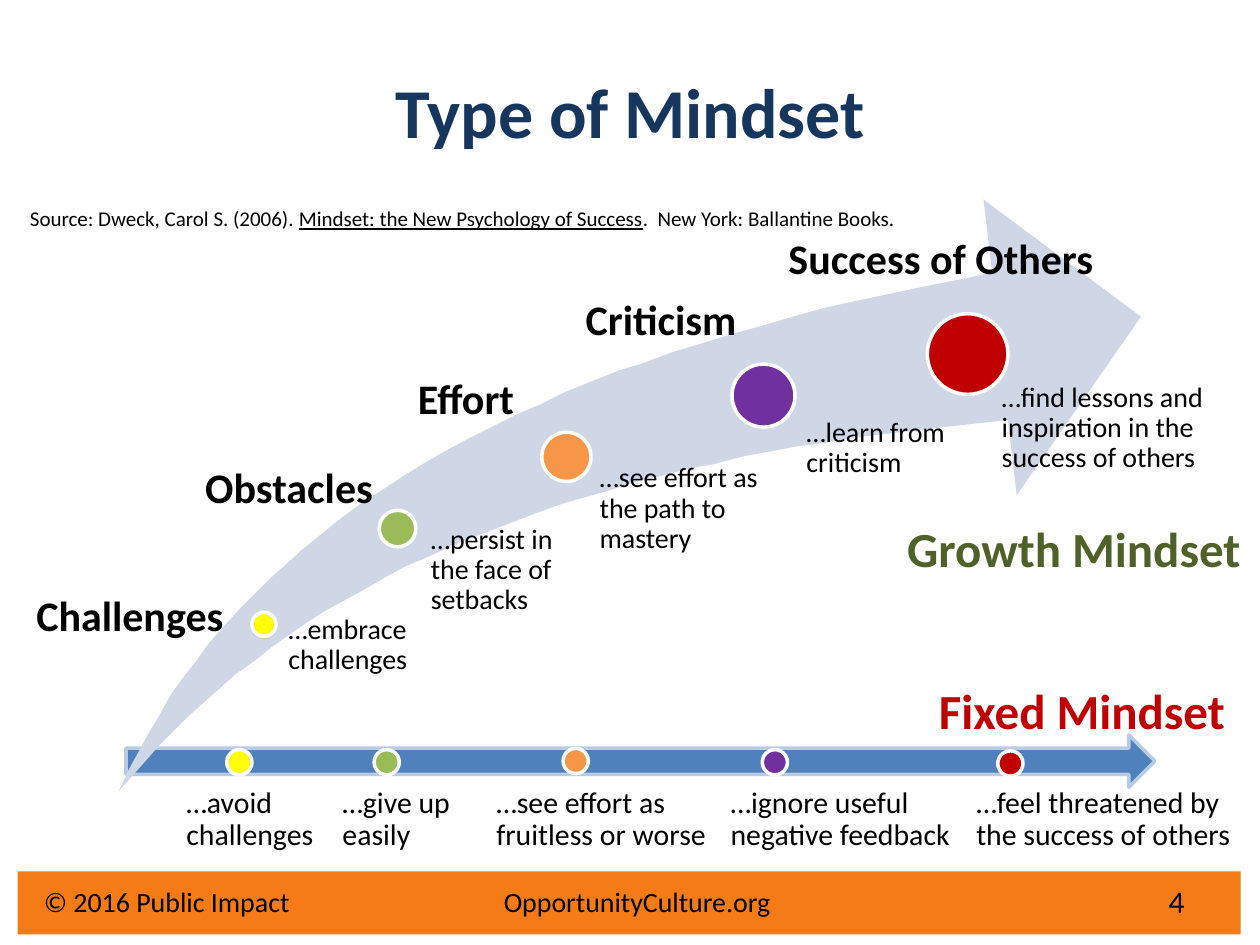
from pptx import Presentation
from pptx.dml.color import RGBColor
from pptx.enum.shapes import MSO_SHAPE as Shape
from pptx.enum.text import MSO_ANCHOR as Anchor, PP_ALIGN as Align
from pptx.oxml.ns import qn
from pptx.util import Pt
from lxml.etree import SubElement

COLORS = {
    "black": "000000", "white": "FFFFFF", "navy": "17365D", "footer": "F57B17",
    "blue": "4F81BD", "pale blue": "B7CCE4", "swoosh": "CFD7E7",
    "yellow": "FFFF00", "green": "9BBB59", "orange": "F79646",
    "purple": "7030A0", "red": "C00000", "dark green": "4F6128",
}
STEP_COLORS = ["yellow", "green", "orange", "purple", "red"]
MARGINS = (7.2, 3.6, 7.2, 3.6)

FIXED_STEPS = [
    (129.6, 428.4, 99.4, 80.6, "…avoid challenges"),
    (213.8, 428.4, 188.6, 80.6, "…give up easily"),
    (321.8, 427.7, 276.5, 143.3, "…see effort as fruitless or worse"),
    (435.6, 428.4, 410.4, 149.8, "…ignore useful negative feedback"),
    (570.2, 429.1, 550.8, 152.6, "…feel threatened by the success of others"),
]
GROWTH_STEPS = [
    ((144, 349.9, 13.7), (13.7, 333.4, 126.7), "Challenges",
     (157.7, 351.4, 76.3, 86.4), 7.2, "…embrace challenges"),
    ((216.7, 291.6, 20.9), (110.2, 259.9, 120.2), "Obstacles",
     (235.4, 300.2, 96.5, 71.3), 10.8, "…persist in the face of setbacks"),
    ((309.6, 247, 28.1), (231.8, 209.5, 120.2), "Effort",
     (327.6, 265, 112.3, 64.1), 15.1, "…see effort as the path to mastery"),
    ((418.3, 208.1, 36), (327.6, 164.2, 120.2), "Criticism",
     (441.4, 239, 116.6, 59.8), 19.4, "…learn from criticism"),
    ((529.9, 179.3, 46.1), (443.5, 129.6, 205.9), "Success of Others",
     (547.9, 218.9, 162.7, 64.8), 24.5,
     "…find lessons and inspiration in the success of others"),
]


def rgb(name):
    return RGBColor.from_string(COLORS[name])


def add_text(p, text, size=16, color="black", bold=False, underline=False):
    r = p.add_run()
    r.text = text
    r.font.name = "Calibri"
    r.font.size = Pt(size)
    r.font.bold = bold
    r.font.underline = underline
    r.font.color.rgb = rgb(color)


def bezier(start, c1, c2, end, steps=40):
    points = []
    for i in range(1, steps + 1):
        t = i / steps
        u = 1 - t
        points.append(tuple(
            u**3 * a + 3 * u * u * t * b + 3 * u * t * t * c + t**3 * d
            for a, b, c, d in zip(start, c1, c2, end)))
    return points


class SlideBuilder:
    def __init__(self, slide):
        self.slide = slide

    def finish(self, sp, fill, line):
        sp.shadow.inherit = False
        sp.fill.solid()
        sp.fill.fore_color.rgb = rgb(fill)
        if line:
            sp.line.color.rgb = rgb(line)
            sp.line.width = Pt(2)
        else:
            sp.line.fill.background()

    def shape(self, kind, box, fill, line=None):
        sp = self.slide.shapes.add_shape(kind, *map(Pt, box))
        self.finish(sp, fill, line)

    def dot(self, left, top, size, fill):
        self.shape(Shape.OVAL, (left, top, size, size), fill, "white")

    def outline(self, points, fill):
        fb = self.slide.shapes.build_freeform(*points[0], scale=Pt(1))
        fb.add_line_segments(points[1:], close=True)
        self.finish(fb.convert_to_shape(), fill, None)

    def title(self, text, box):
        sp = self.slide.shapes.title
        sp.left, sp.top, sp.width, sp.height = map(Pt, box)
        sp.text_frame.vertical_anchor = Anchor.MIDDLE
        p = sp.text_frame.paragraphs[0]
        p.alignment = Align.CENTER
        add_text(p, text, size=40, color="navy", bold=True)

    def text(self, box, text="", margins=MARGINS, align=Align.LEFT,
             anchor=Anchor.TOP, spacing=None, **style):
        tf = self.slide.shapes.add_textbox(*map(Pt, box)).text_frame
        tf.word_wrap = True
        tf.vertical_anchor = anchor
        (tf.margin_left, tf.margin_top,
         tf.margin_right, tf.margin_bottom) = map(Pt, margins)
        p = tf.paragraphs[0]
        p.alignment = align
        if spacing:
            p.line_spacing = spacing
        if text:
            add_text(p, text, **style)
        return p

    def caption(self, box, text, indent=7.2, size=16):
        self.text(box, text, margins=(indent, 0, 0, 0), spacing=0.9, size=size)

    def heading(self, box, text, color):
        self.text(box, text, align=Align.CENTER, size=28, color=color, bold=True)

    def footer(self, box, left_text, right_text, tab):
        p = self.text(box)
        tabs = SubElement(p._p.get_or_add_pPr(), qn("a:tabLst"))
        SubElement(tabs, qn("a:tab"), pos=str(Pt(tab)), algn="l")
        add_text(p, f"{left_text}\t{right_text}")


def main():
    prs = Presentation()
    prs.slide_width, prs.slide_height = Pt(720), Pt(540)
    s = SlideBuilder(prs.slides.add_slide(prs.slide_layouts[5]))

    s.shape(Shape.RECTANGLE, (10, 498, 699, 36), "footer")
    s.title("Type of Mindset", (36, 18, 648, 90))

    s.shape(Shape.RIGHT_ARROW, (72, 420, 588, 30), "blue", "pale blue")
    for color, (x, y, left, width, text) in zip(STEP_COLORS, FIXED_STEPS):
        s.dot(x, y, 14.4, color)
        s.caption((left, 450, width, 45), text, size=17)

    tail, upper, lower = (68.4, 452.2), (566.6, 156.2), (576, 240.5)
    s.outline(
        [tail]
        + bezier(tail, (133.2, 301.7), (299.5, 203), upper)
        + [(562.3, 113.8), (651.6, 181.4), (581, 283), lower]
        + bezier(lower, (334.8, 259.9), (165.6, 329.8), tail),
        "swoosh")
    for color, step in zip(STEP_COLORS, GROWTH_STEPS):
        dot, label_box, label, caption_box, indent, caption = step
        s.dot(*dot, color)
        s.text((*label_box, 36), label, size=24, bold=True)
        s.caption(caption_box, caption, indent)

    s.heading((509.8, 293, 207.4, 41), "Growth Mindset", "dark green")
    s.heading((514.1, 385.2, 208.1, 41), "Fixed Mindset", "red")

    p = s.text((10, 113.8, 536.4, 21.6))
    add_text(p, "Source: Dweck, Carol S. (2006). ", size=12)
    add_text(p, "Mindset: the New Psychology of Success", size=12, underline=True)
    add_text(p, ".  New York: Ballantine Books.", size=12)

    s.footer((18, 501.8, 498, 26.6), "© 2016 Public Impact",
             "OpportunityCulture.org", tab=262.8)
    s.text((635.8, 500.4, 48.2, 28.8), "4", align=Align.RIGHT,
           anchor=Anchor.MIDDLE, size=18)

    prs.save("out.pptx")


if __name__ == "__main__":
    main()
